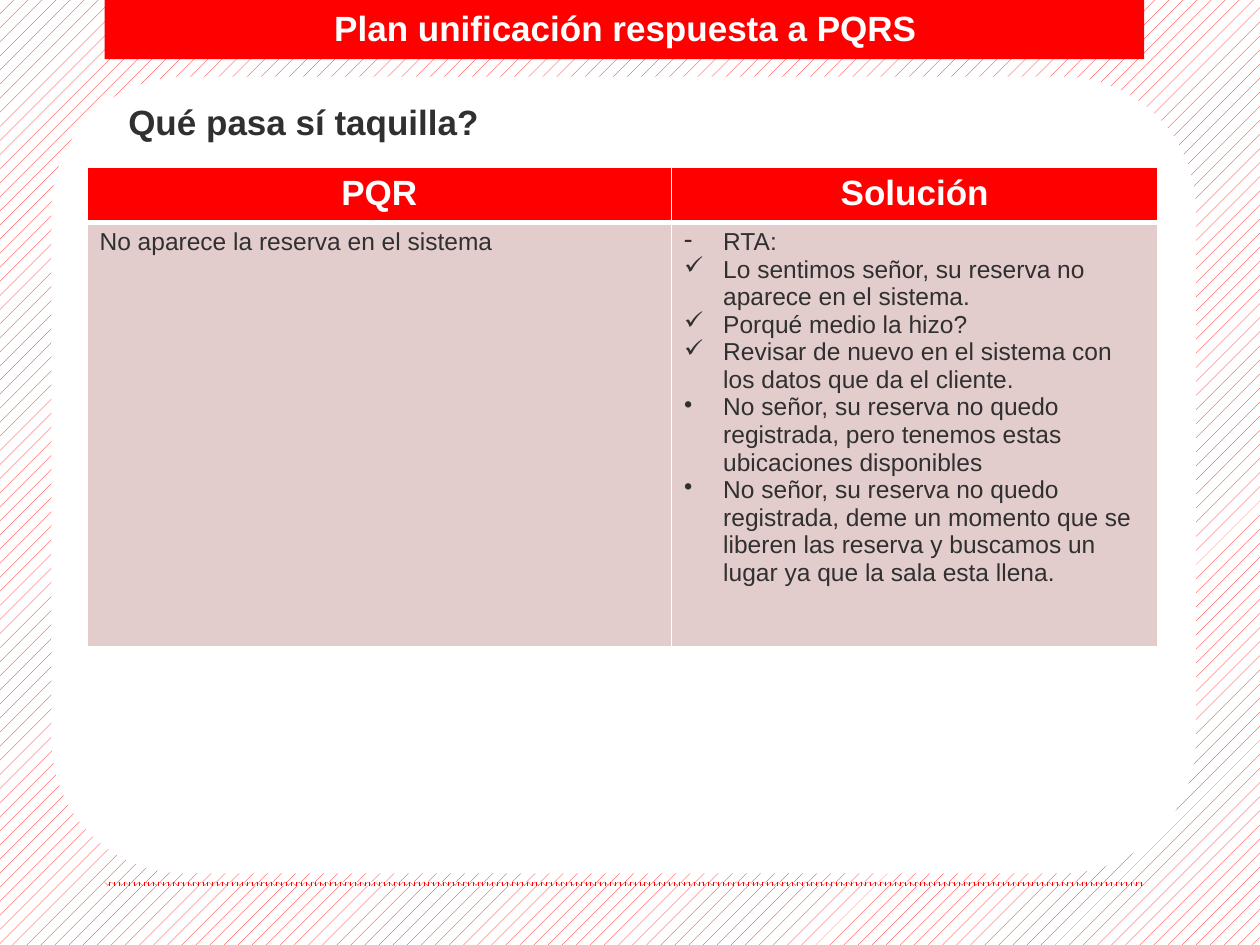
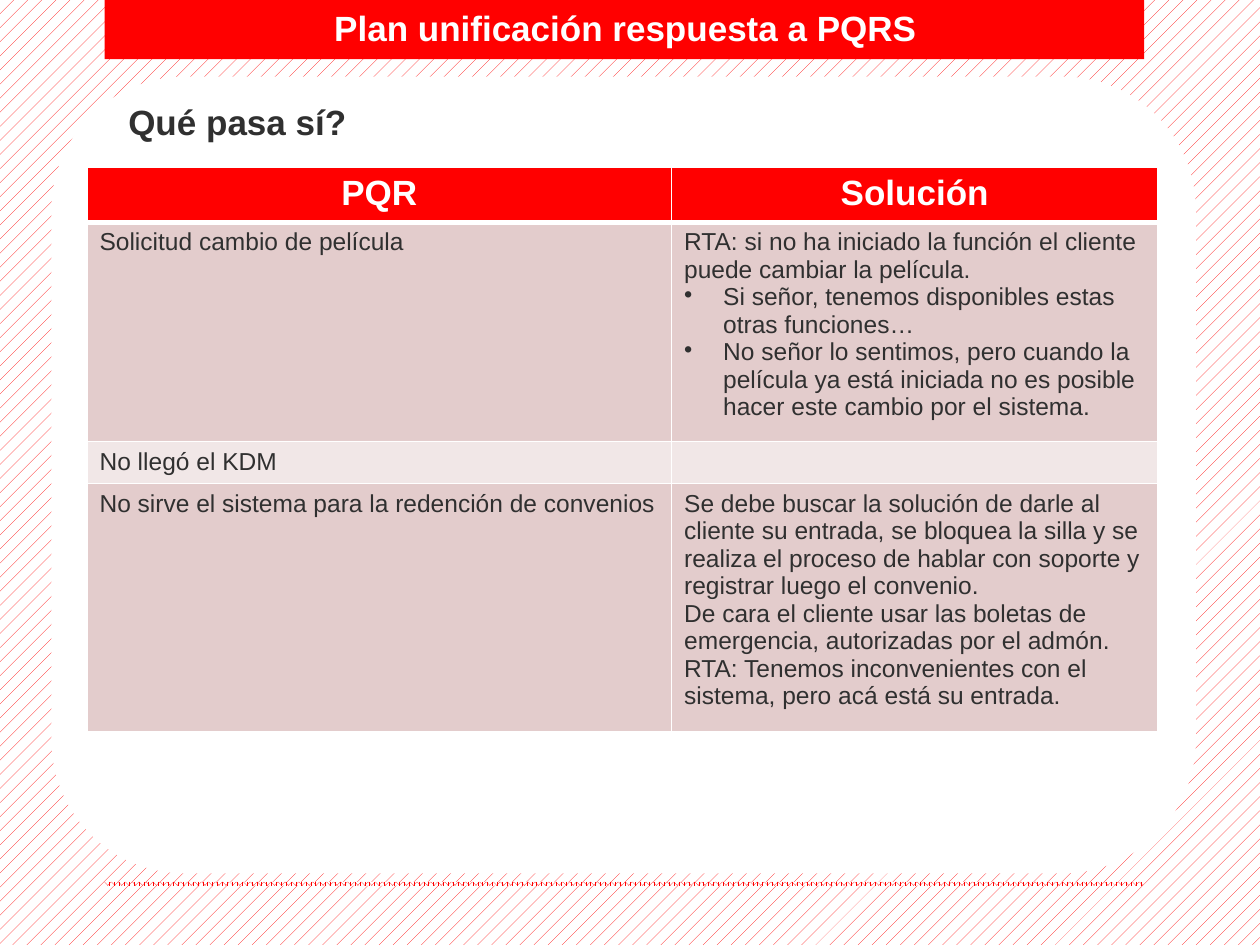
from dataclasses import dataclass

from pptx import Presentation
from pptx.dml.color import RGBColor as Color
from pptx.enum.dml import MSO_PATTERN as Pattern
from pptx.enum.shapes import MSO_SHAPE as Shape
from pptx.enum.text import PP_ALIGN as Align
from pptx.oxml.ns import qn
from pptx.oxml.xmlchemy import OxmlElement as Element
from pptx.util import Inches, Pt


@dataclass(frozen=True)
class Theme:
    red: Color = Color(0xFF, 0x00, 0x00)
    white: Color = Color(0xFF, 0xFF, 0xFF)
    ink: Color = Color(0x30, 0x30, 0x30)
    row_fills: tuple = (Color(0xE3, 0xCC, 0xCC), Color(0xF1, 0xE7, 0xE7))
    font: str = "Arial"
    heading: int = 20
    body: int = 14
    thin: int = 1
    thick: int = 3


THEME = Theme()
TITLE = "Plan unificación respuesta a PQRS"
HEADERS = ("PQR", "Solución")
COLUMN_WIDTHS = (4.64, 3.86)
HEADER_HEIGHT = 0.43
BULLET_INDENT = 0.31

# Text formats
BODY = dict(name=THEME.font, size=Pt(THEME.body), bold=False)
HEADING = dict(name=THEME.font, size=Pt(THEME.heading), bold=True)

# Each row: height, question, answer as (bullet, text) pairs
PAGES = [
    ("Qué pasa sí taquilla?", [
        (3.37, "No aparece la reserva en el sistema", [
            ("-", "RTA:"),
            ("✓", "Lo sentimos señor, su reserva no aparece en el sistema."),
            ("✓", "Porqué medio la hizo?"),
            ("✓", "Revisar de nuevo en el sistema con los datos que da el cliente."),
            ("•", "No señor, su reserva no quedo registrada, pero tenemos estas "
                  "ubicaciones disponibles"),
            ("•", "No señor, su reserva no quedo registrada, deme un momento que se "
                  "liberen las reserva y buscamos un lugar ya que la sala esta llena."),
        ]),
    ]),
    ("Qué pasa sí?", [
        (1.74, "Solicitud cambio de película", [
            (None, "RTA: si no ha iniciado la función el cliente puede cambiar "
                   "la película."),
            ("•", "Si señor, tenemos disponibles estas otras funciones…"),
            ("•", "No señor lo sentimos, pero cuando la película ya está iniciada "
                  "no es posible hacer este cambio por el sistema."),
        ]),
        (0.33, "No llegó el KDM", [(None, "")]),
        (1.96, "No sirve el sistema para la redención de convenios", [
            (None, "Se debe buscar la solución de darle al cliente su entrada, se "
                   "bloquea la silla y se realiza el proceso de hablar con soporte y "
                   "registrar luego el convenio."),
            (None, "De cara el cliente usar las boletas de emergencia, autorizadas "
                   "por el admón."),
            (None, "RTA: Tenemos inconvenientes con el sistema, pero acá está su "
                   "entrada."),
        ]),
    ]),
]


def format_font(font, values, color):
    for name, value in values.items():
        setattr(font, name, value)
    font.color.rgb = color


def set_pattern(fill, pattern):
    fill.patterned()
    fill.pattern = pattern
    fill.fore_color.rgb = THEME.red
    fill.back_color.rgb = THEME.white


def add_block(page, kind, place, color):
    block = page.shapes.add_shape(kind, *map(Inches, place))
    block.shadow.inherit = False
    block.fill.solid()
    block.fill.fore_color.rgb = color
    block.line.fill.background()
    return block


def add_heading(page, text, place, color, align=Align.LEFT):
    box = page.shapes.add_textbox(*map(Inches, place))
    box.text_frame.word_wrap = True
    para = box.text_frame.paragraphs[0]
    para.alignment = align
    span = para.add_run()
    span.text = text
    format_font(span.font, HEADING, color)


def add_bullet(para, symbol):
    properties = para._p.get_or_add_pPr()
    properties.set("marL", str(Inches(BULLET_INDENT)))
    properties.set("indent", str(-Inches(BULLET_INDENT)))
    bullet = Element("a:buChar")
    bullet.set("char", symbol)
    properties.append(bullet)


def set_borders(cell, top, bottom):
    sides = dict(L=THEME.thin, R=THEME.thin, T=top, B=bottom)
    properties = cell._tc.get_or_add_tcPr()
    for position, (side, width) in enumerate(sides.items()):
        line = Element(f"a:ln{side}")
        line.set("w", str(Pt(width)))
        fill, color = Element("a:solidFill"), Element("a:srgbClr")
        color.set("val", str(THEME.white))
        fill.append(color)
        line.append(fill)
        properties.insert(position, line)


def fill_cell(cell, lines, fill, values, color, align=Align.LEFT,
              top=THEME.thin, bottom=THEME.thin):
    cell.fill.solid()
    cell.fill.fore_color.rgb = fill
    set_borders(cell, top, bottom)
    frame = cell.text_frame
    for index, (bullet, text) in enumerate(lines):
        para = frame.add_paragraph() if index else frame.paragraphs[0]
        para.alignment = align
        if bullet:
            add_bullet(para, bullet)
        if text:
            span = para.add_run()
            span.text = text
            format_font(span.font, values, color)
        else:
            # An empty cell keeps the row at body height
            end = para._p.get_or_add_endParaRPr()
            end.set("sz", str(THEME.body * 100))


def add_answers(page, rows):
    heights = [HEADER_HEIGHT] + [row[0] for row in rows]
    place = (0.69, 1.33, sum(COLUMN_WIDTHS), sum(heights))
    table = page.shapes.add_table(len(heights), len(HEADERS),
                                  *map(Inches, place)).table
    for column, width in zip(table.columns, COLUMN_WIDTHS):
        column.width = Inches(width)
    for row, height in zip(table.rows, heights):
        row.height = Inches(height)
    for column, text in enumerate(HEADERS):
        fill_cell(table.cell(0, column), [(None, text)], THEME.red, HEADING,
                  THEME.white, Align.CENTER, bottom=THEME.thick)
    for index, (_, question, answer) in enumerate(rows):
        fill = THEME.row_fills[index % 2]
        top = THEME.thin if index else THEME.thick
        for column, lines in enumerate(([(None, question)], answer)):
            fill_cell(table.cell(index + 1, column), lines, fill, BODY,
                      THEME.ink, top=top)


def add_frame(page):
    # Hatched background, footer rule, title band and white panel
    set_pattern(page.background.fill, Pattern.PERCENT_10)
    footer = add_block(page, Shape.RECTANGLE, (0.83, 7, 8.25, 0.03), THEME.red)
    set_pattern(footer.fill, Pattern.PERCENT_75)
    add_block(page, Shape.RECTANGLE, (0.83, 0, 8.25, 0.47), THEME.red)
    panel = add_block(page, Shape.ROUNDED_RECTANGLE, (0.42, 0.62, 9.06, 6.3),
                      THEME.white)
    panel.line.color.rgb = THEME.white
    panel.line.width = Pt(1.75)
    add_heading(page, TITLE, (0.83, 0, 8.27, 0.44), THEME.white, Align.CENTER)


def main():
    deck = Presentation()
    deck.slide_width, deck.slide_height = Inches(10), Inches(7.5)
    blank = deck.slide_layouts[6]
    for question, rows in PAGES:
        page = deck.slides.add_slide(blank)
        add_frame(page)
        add_answers(page, rows)
        add_heading(page, question, (0.92, 0.75, 8.67, 0.77), THEME.ink)
    deck.save("out.pptx")


if __name__ == "__main__":
    main()
